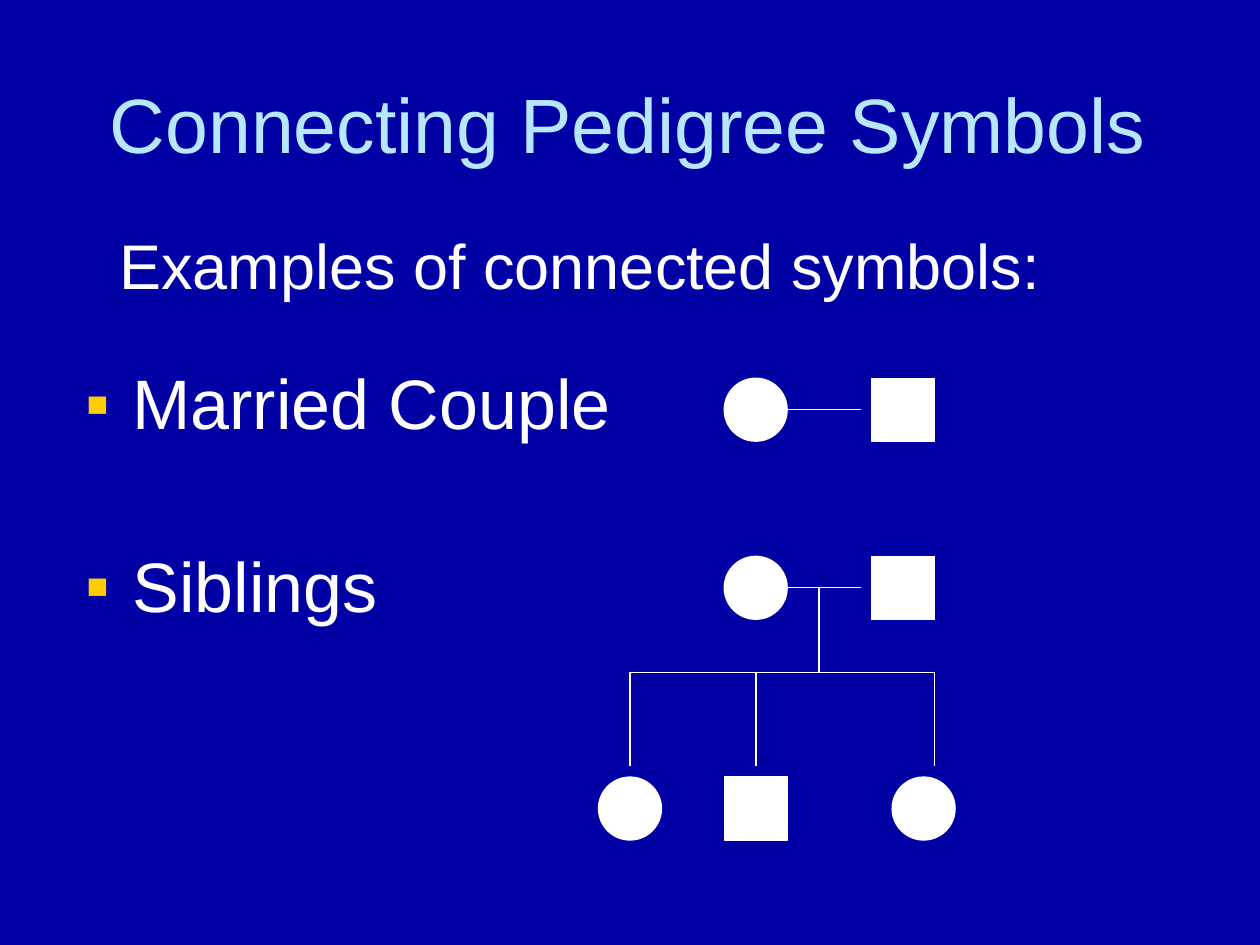
from dataclasses import dataclass

from lxml.etree import SubElement
from pptx import Presentation
from pptx.dml.color import RGBColor
from pptx.enum.shapes import MSO_CONNECTOR, MSO_SHAPE
from pptx.enum.text import MSO_ANCHOR, PP_ALIGN
from pptx.oxml.ns import qn
from pptx.shapes.group import GroupShape
from pptx.util import Cm, Pt

COLORS = {"background": "0000A4", "title": "B7E7FF", "ink": "FFFFFF", "bullet": "FFCC00"}
FEMALE, MALE = MSO_SHAPE.OVAL, MSO_SHAPE.RECTANGLE
SIZE = 1.27  # side of every pedigree symbol, in cm
RADIUS = SIZE / 2
MOTHER_X, FATHER_X = 14.61, 18.21
MARRIAGE_END = 17.36  # the marriage line stops short of the father
COUPLE_Y, PARENTS_Y = 8.26, 11.85
SIBLING_LINE_Y, DROP_END_Y, CHILDREN_Y = 13.55, 15.45, 16.3


@dataclass
class Person:
    """A pedigree symbol by its centre, in cm."""
    sex: MSO_SHAPE
    x: float
    y: float


@dataclass
class Link:
    """A straight line between two points, in cm."""
    x1: float
    y1: float
    x2: float
    y2: float


def color(name: str) -> RGBColor:
    return RGBColor.from_string(COLORS[name])


def draw_person(group: GroupShape, person: Person) -> None:
    symbol = group.shapes.add_shape(
        person.sex, Cm(person.x - RADIUS), Cm(person.y - RADIUS), Cm(SIZE), Cm(SIZE))
    symbol.shadow.inherit = False
    symbol.fill.solid()
    symbol.fill.fore_color.rgb = color("ink")
    symbol.line.color.rgb = color("ink")
    symbol.line.width = Pt(0.75)


def draw_link(group: GroupShape, link: Link) -> None:
    line = group.shapes.add_connector(
        MSO_CONNECTOR.STRAIGHT, Cm(link.x1), Cm(link.y1), Cm(link.x2), Cm(link.y2))
    line.line.color.rgb = color("ink")
    line.line.width = Pt(0.75)
    SubElement(line._element.spPr, qn("a:effectLst"))


def draw_couple(group: GroupShape, y: float) -> None:
    draw_person(group, Person(FEMALE, MOTHER_X + RADIUS - 0.01, y))
    draw_person(group, Person(MALE, FATHER_X, y))
    draw_link(group, Link(MOTHER_X + SIZE - 0.64, y, MARRIAGE_END, y))


def add_bullet(paragraph) -> None:
    properties = paragraph._p.get_or_add_pPr()
    properties.set("marL", str(Cm(0.95)))
    properties.set("indent", str(-Cm(0.95)))
    bullet_color = SubElement(properties, qn("a:buClr"))
    SubElement(bullet_color, qn("a:srgbClr")).set("val", COLORS["bullet"])
    SubElement(properties, qn("a:buFont")).set("typeface", "Arial")
    SubElement(properties, qn("a:buChar")).set("char", "▪")


def style(paragraph, size: int, color_name: str) -> None:
    paragraph.font.name = "Arial"
    paragraph.font.size = Pt(size)
    paragraph.font.color.rgb = color(color_name)


def add_text(slide, left: float, top: float, width: float, height: float):
    return slide.shapes.add_textbox(Cm(left), Cm(top), Cm(width), Cm(height)).text_frame


def main() -> None:
    global MOTHER_X
    presentation = Presentation()
    presentation.slide_width, presentation.slide_height = Cm(25.4), Cm(19.05)
    slide = presentation.slides.add_slide(presentation.slide_layouts[6])
    slide.background.fill.solid()
    slide.background.fill.fore_color.rgb = color("background")

    # Title
    title = add_text(slide, 0.84, 0.64, 23.65, 3.68)
    title.word_wrap = True
    title.vertical_anchor = MSO_ANCHOR.MIDDLE
    title.text = "Connecting Pedigree Symbols"
    title.paragraphs[0].alignment = PP_ALIGN.CENTER
    style(title.paragraphs[0], 44, "title")

    # Introduction
    introduction = add_text(slide, 2.16, 4.45, 19.08, 1.78)
    introduction.word_wrap = False
    introduction.text = "Examples of connected symbols:"
    style(introduction.paragraphs[0], 36, "ink")

    # Bulleted relations
    relations = add_text(slide, 1.47, 7.32, 11.86, 5.72)
    relations.word_wrap = True
    relations.text = "Married Couple\nSiblings"
    for index, relation in enumerate(relations.paragraphs):
        add_bullet(relation)
        relation.line_spacing = 0.9
        if index:
            relation.space_before = Pt(61)
        style(relation, 40, "ink")

    # Married couple
    draw_couple(slide.shapes.add_group_shape(), COUPLE_Y)

    # Parents with three siblings
    family = slide.shapes.add_group_shape()
    draw_couple(family, PARENTS_Y)
    children = [Person(FEMALE, 12.7, CHILDREN_Y), Person(MALE, 15.24, CHILDREN_Y),
                Person(FEMALE, 18.62, CHILDREN_Y)]
    for child in children:
        draw_person(family, child)
    drops = [12.7, 15.24, 18.84]
    for x in drops:
        draw_link(family, Link(x, SIBLING_LINE_Y, x, DROP_END_Y))
    draw_link(family, Link(drops[0], SIBLING_LINE_Y, drops[-1], SIBLING_LINE_Y))
    draw_link(family, Link(16.51, SIBLING_LINE_Y, 16.51, PARENTS_Y))

    presentation.save("out.pptx")


if __name__ == "__main__":
    main()
